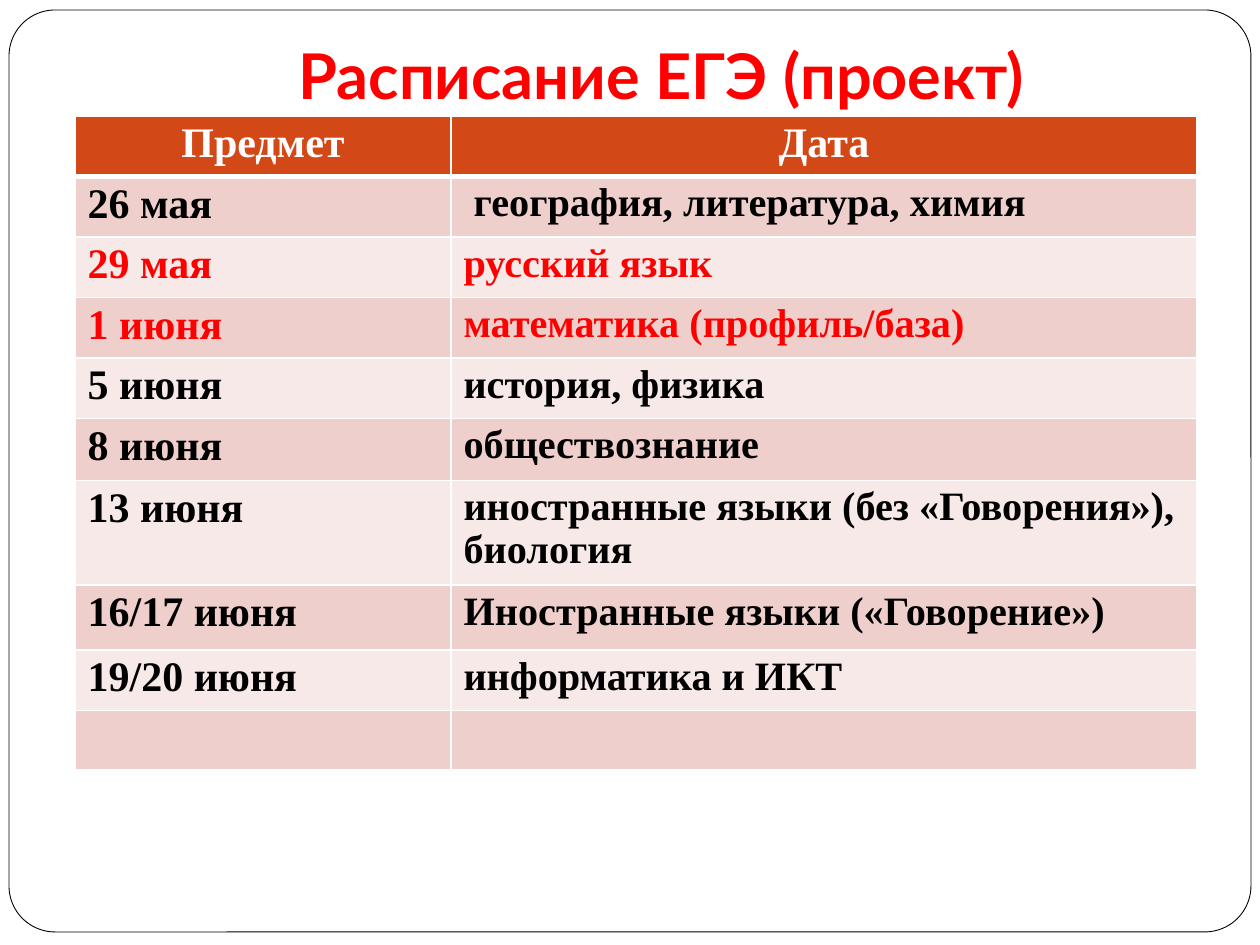
from lxml import etree
from pptx import Presentation
from pptx.dml.color import RGBColor
from pptx.enum.shapes import MSO_SHAPE
from pptx.enum.text import MSO_ANCHOR, PP_ALIGN
from pptx.oxml.ns import qn
from pptx.util import Emu, Pt

PX = 914400 // 126
ROUNDED = MSO_SHAPE.ROUNDED_RECTANGLE
BOTTOM = MSO_ANCHOR.BOTTOM
LEFT, CENTER = PP_ALIGN.LEFT, PP_ALIGN.CENTER

WHITE = RGBColor(0xFF, 0xFF, 0xFF)
BLACK = RGBColor(0, 0, 0)
RED = RGBColor(0xFF, 0, 0)
ORANGE = RGBColor(0xD3, 0x48, 0x17)
BANDS = (RGBColor(0xF7, 0xE9, 0xE8), RGBColor(0xEF, 0xCF, 0xCC))

TITLE_FONT = "Lato"
TABLE_FONT = "Times New Roman"

COLUMN_WIDTHS = (376, 746)
HEADER = ("Предмет", "Дата")
# Date, subjects, text colour, row height
EXAMS = (
    ("26 мая", " география, литература, химия", BLACK, 60),
    ("29 мая", "русский язык", RED, 60),
    ("1 июня", "математика (профиль/база)", RED, 60),
    ("5 июня", "история, физика", BLACK, 60),
    ("8 июня", "обществознание", BLACK, 62),
    ("13 июня", "иностранные языки (без «Говорения»), биология", BLACK, 102),
    ("16/17 июня", "Иностранные языки («Говорение»)", BLACK, 65),
    ("19/20 июня", "информатика и ИКТ", BLACK, 59),
    ("", "", BLACK, 59),
)


def px(*lengths):
    return [Emu(length * PX) for length in lengths]


def write_text(text_frame, text, *, size, color, font, align=LEFT, spacing=1.0):
    paragraph = text_frame.paragraphs[0]
    paragraph.alignment = align
    paragraph.line_spacing = spacing
    if not text:
        return
    run = paragraph.add_run()
    run.text = text
    run.font.name = font
    run.font.size = Pt(size)
    run.font.bold = True
    run.font.color.rgb = color


def add_frame(slide):
    shape = slide.shapes.add_shape(ROUNDED, *px(9, 10, 1242, 922))
    shape.adjustments[0] = 0.05
    shape.shadow.inherit = False
    shape.fill.solid()
    shape.fill.fore_color.rgb = WHITE
    shape.line.color.rgb = BLACK
    shape.line.width = Pt(0.5)


def add_title(slide, text):
    text_frame = slide.shapes.add_textbox(*px(126, 38, 1071, 87)).text_frame
    text_frame.word_wrap = True
    text_frame.vertical_anchor = BOTTOM
    text_frame.margin_bottom = text_frame.margin_left
    write_text(text_frame, text, size=36, color=RED, font=TITLE_FONT, align=CENTER)


def set_borders(cell, color, **widths):
    properties = cell._tc.get_or_add_tcPr()
    for side in "LRTB":
        line = etree.SubElement(properties, qn(f"a:ln{side}"), w=str(Pt(widths.get(side, 1))))
        fill = etree.SubElement(line, qn("a:solidFill"))
        etree.SubElement(fill, qn("a:srgbClr"), val=str(color))


def fill_cell(cell, text, fill, bottom_border=1, **text_format):
    set_borders(cell, WHITE, B=bottom_border)
    cell.fill.solid()
    cell.fill.fore_color.rgb = fill
    write_text(cell.text_frame, text, font=TABLE_FONT, spacing=0.95, **text_format)


def add_schedule(slide):
    heights = [59] + [height for *_, height in EXAMS]
    frame = slide.shapes.add_table(
        len(heights), len(COLUMN_WIDTHS), *px(75, 116, sum(COLUMN_WIDTHS), sum(heights))
    )
    table = frame.table
    for column, width in zip(table.columns, px(*COLUMN_WIDTHS)):
        column.width = width
    for row, height in zip(table.rows, px(*heights)):
        row.height = height

    # Header row
    for column, text in enumerate(HEADER):
        fill_cell(table.cell(0, column), text, ORANGE, bottom_border=3,
                  size=24, color=WHITE, align=CENTER)

    # Banded exam rows
    for row, (date, subjects, color, _) in enumerate(EXAMS, start=1):
        band = BANDS[row % 2]
        fill_cell(table.cell(row, 0), date, band, size=24, color=color)
        fill_cell(table.cell(row, 1), subjects, band, size=23, color=color)


def main():
    presentation = Presentation()
    presentation.slide_width, presentation.slide_height = px(1260, 945)
    slide = presentation.slides.add_slide(presentation.slide_layouts[6])
    add_frame(slide)
    add_title(slide, "Расписание ЕГЭ (проект)")
    add_schedule(slide)
    presentation.save("out.pptx")


if __name__ == "__main__":
    main()
